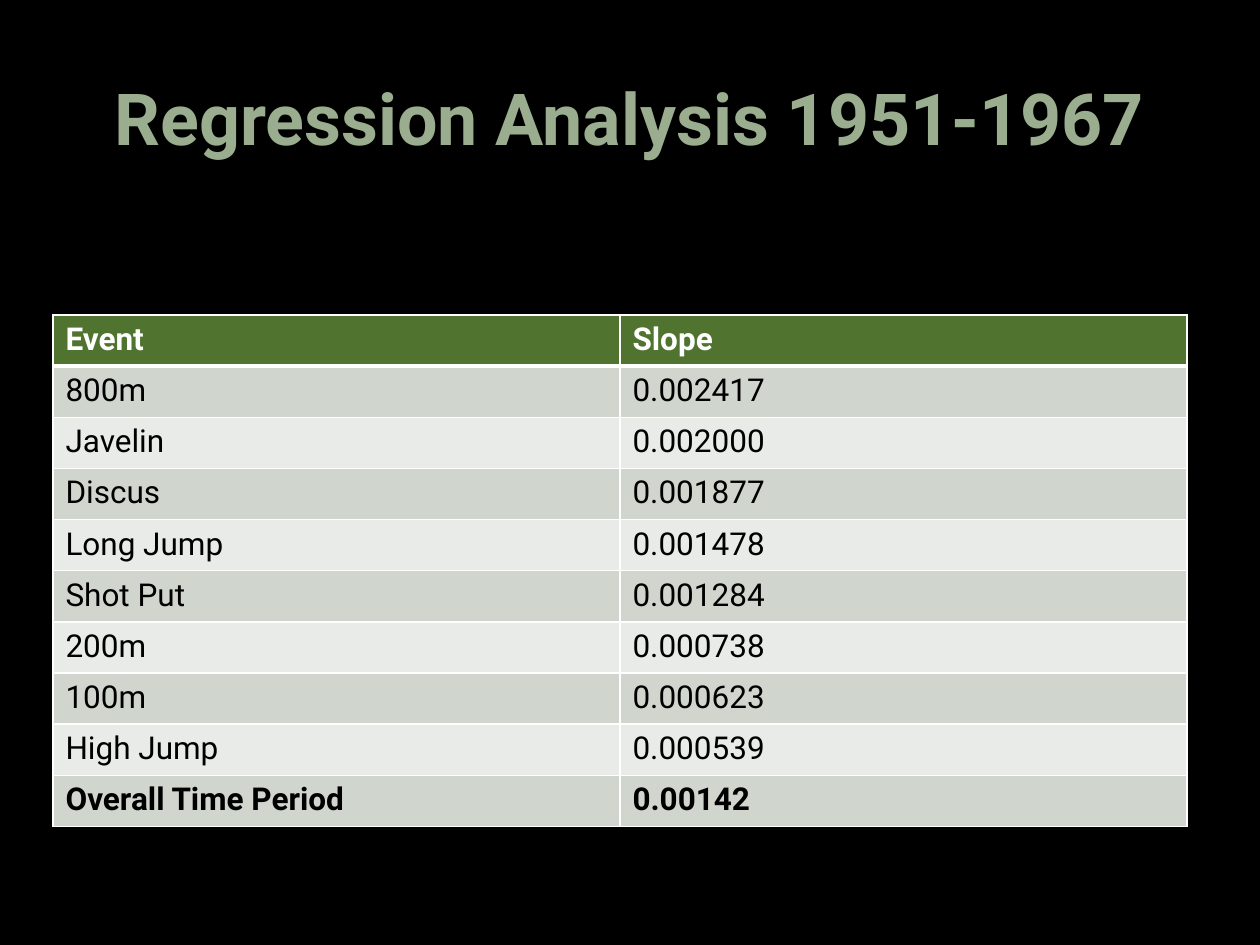
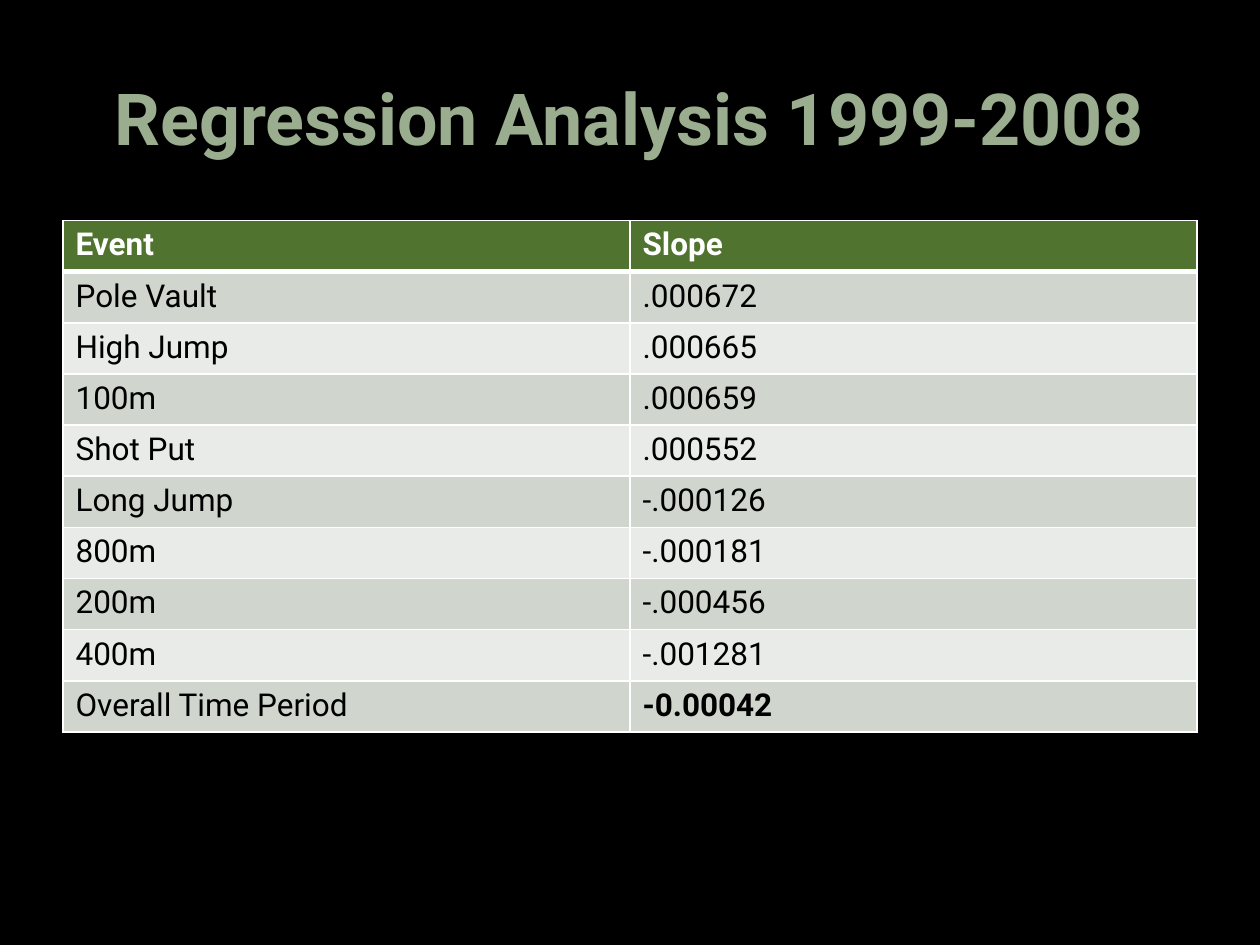
from lxml import etree
from pptx import Presentation
from pptx.dml.color import RGBColor
from pptx.enum.text import MSO_ANCHOR, PP_ALIGN
from pptx.oxml.ns import qn
from pptx.util import Inches, Pt

CENTER = PP_ALIGN.CENTER
MIDDLE = MSO_ANCHOR.MIDDLE
TITLE_ONLY = 5

COLORS = {
    "background": "000000",
    "title": "9AAE8F",
    "header": "50742F",
    "odd_row": "D0D6CD",
    "even_row": "E9EBE8",
    "header_text": "FFFFFF",
    "body_text": "000000",
    "border": "FFFFFF",
}

HEADER = ("Event", "Slope")
SLOPES_1951 = [
    ("800m", "0.002417"),
    ("Javelin", "0.002000"),
    ("Discus", "0.001877"),
    ("Long Jump", "0.001478"),
    ("Shot Put", "0.001284"),
    ("200m", "0.000738"),
    ("100m", "0.000623"),
    ("High Jump", "0.000539"),
    ("Overall Time Period", "0.00142"),
]
SLOPES_1999 = [
    ("Pole Vault", ".000672"),
    ("High Jump", ".000665"),
    ("100m", ".000659"),
    ("Shot Put", ".000552"),
    ("Long Jump", "-.000126"),
    ("800m", "-.000181"),
    ("200m", "-.000456"),
    ("400m", "-.001281"),
    ("Overall Time Period", "-0.00042"),
]


def rgb(name):
    return RGBColor.from_string(COLORS[name])


class Deck:
    font = "Roboto"
    title_size = 41
    table_size = 18
    border_width = 1
    header_rule = 3

    def __init__(self):
        self.prs = Presentation()
        self.prs.slide_width = Inches(10)
        self.prs.slide_height = Inches(7.5)
        self.slide = None

    def add_slide(self, title):
        layout = self.prs.slide_layouts[TITLE_ONLY]
        self.slide = self.prs.slides.add_slide(layout)
        fill = self.slide.background.fill
        fill.solid()
        fill.fore_color.rgb = rgb("background")
        self.title(title)

    def title(self, text):
        sp = self.slide.shapes.title
        sp.left, sp.top = Inches(0.5), Inches(0.3)
        sp.width, sp.height = Inches(9), Inches(1.25)
        tf = sp.text_frame
        tf.text = text
        tf.vertical_anchor = MIDDLE
        p = tf.paragraphs[0]
        p.alignment = CENTER
        self.style(p, self.title_size, "title", True)

    def style(self, p, size, color, bold):
        p.font.name = self.font
        p.font.size = Pt(size)
        p.font.bold = bold
        p.font.color.rgb = rgb(color)

    def table(self, left, top, rows, bold_cells):
        """Add a header and banded rows; bold_cells holds (row, column) pairs."""
        rows = [HEADER, *rows]
        frame = self.slide.shapes.add_table(
            len(rows), len(HEADER), Inches(left), Inches(top), Inches(9), Inches(4.06)
        )
        for i, row in enumerate(rows):
            for j, text in enumerate(row):
                bold = i == 0 or (i, j) in bold_cells
                self.cell(frame.table.cell(i, j), text, i, bold)

    def cell(self, cell, text, row, bold):
        if row == 0:
            fill, color = "header", "header_text"
        else:
            fill, color = "odd_row" if row % 2 else "even_row", "body_text"
        cell.text = text
        self.style(cell.text_frame.paragraphs[0], self.table_size, color, bold)
        self.borders(cell, row)
        cell.fill.solid()
        cell.fill.fore_color.rgb = rgb(fill)

    def borders(self, cell, row):
        """Draw thin borders, with a thick rule between header and body."""
        props = cell._tc.get_or_add_tcPr()
        for side in "LRTB":
            on_rule = (row, side) in ((0, "B"), (1, "T"))
            width = self.header_rule if on_rule else self.border_width
            ln = etree.SubElement(props, qn(f"a:ln{side}"), w=str(Pt(width)))
            solid = etree.SubElement(ln, qn("a:solidFill"))
            etree.SubElement(solid, qn("a:srgbClr"), val=COLORS["border"])


def main():
    deck = Deck()
    total_row = len(SLOPES_1951)
    deck.add_slide("Regression Analysis 1951-1967")
    deck.table(0.42, 2.5, SLOPES_1951, {(total_row, 0), (total_row, 1)})

    total_row = len(SLOPES_1999)
    deck.add_slide("Regression Analysis 1999-2008")
    deck.table(0.5, 1.75, SLOPES_1999, {(total_row, 1)})
    deck.prs.save("out.pptx")


if __name__ == "__main__":
    main()
